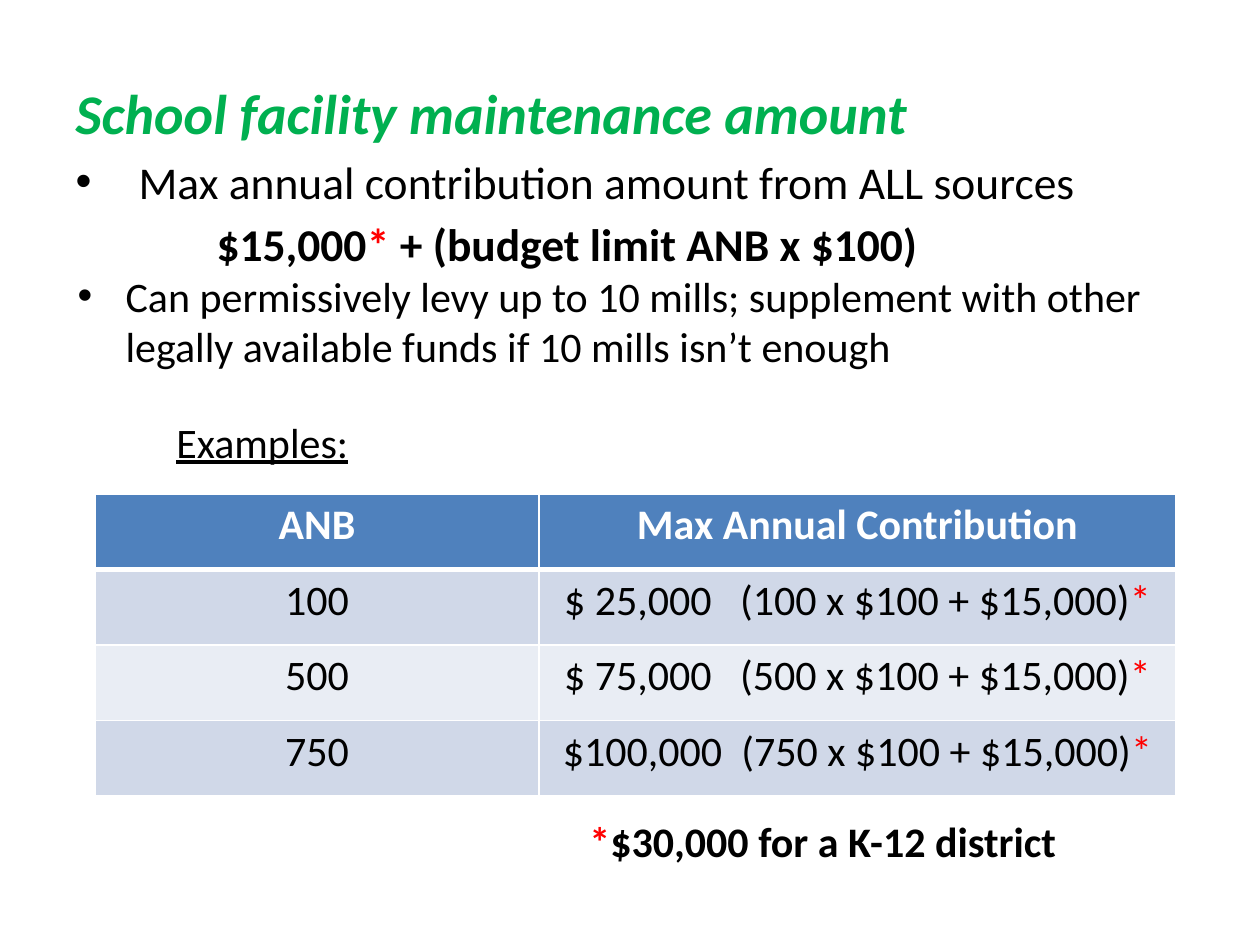
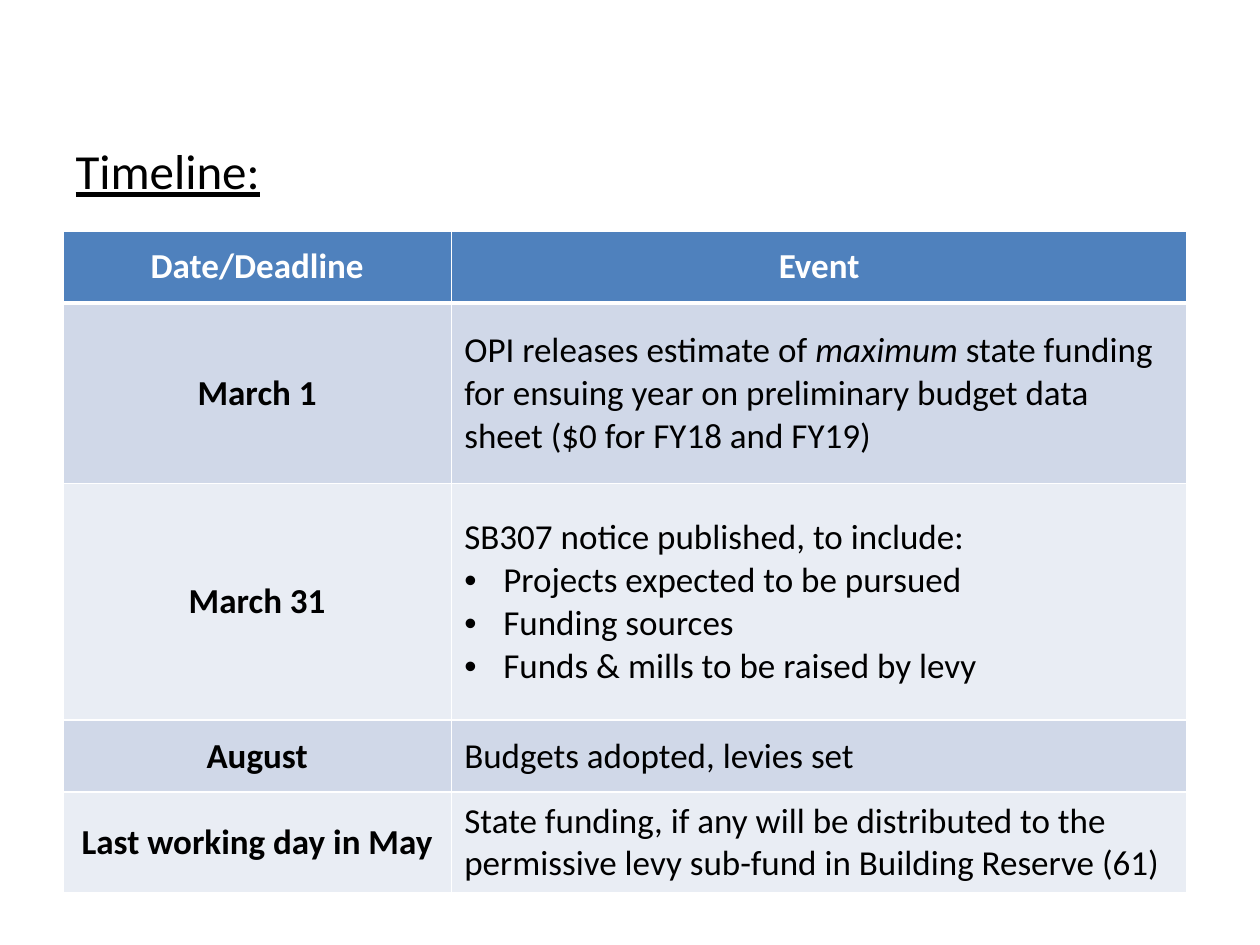
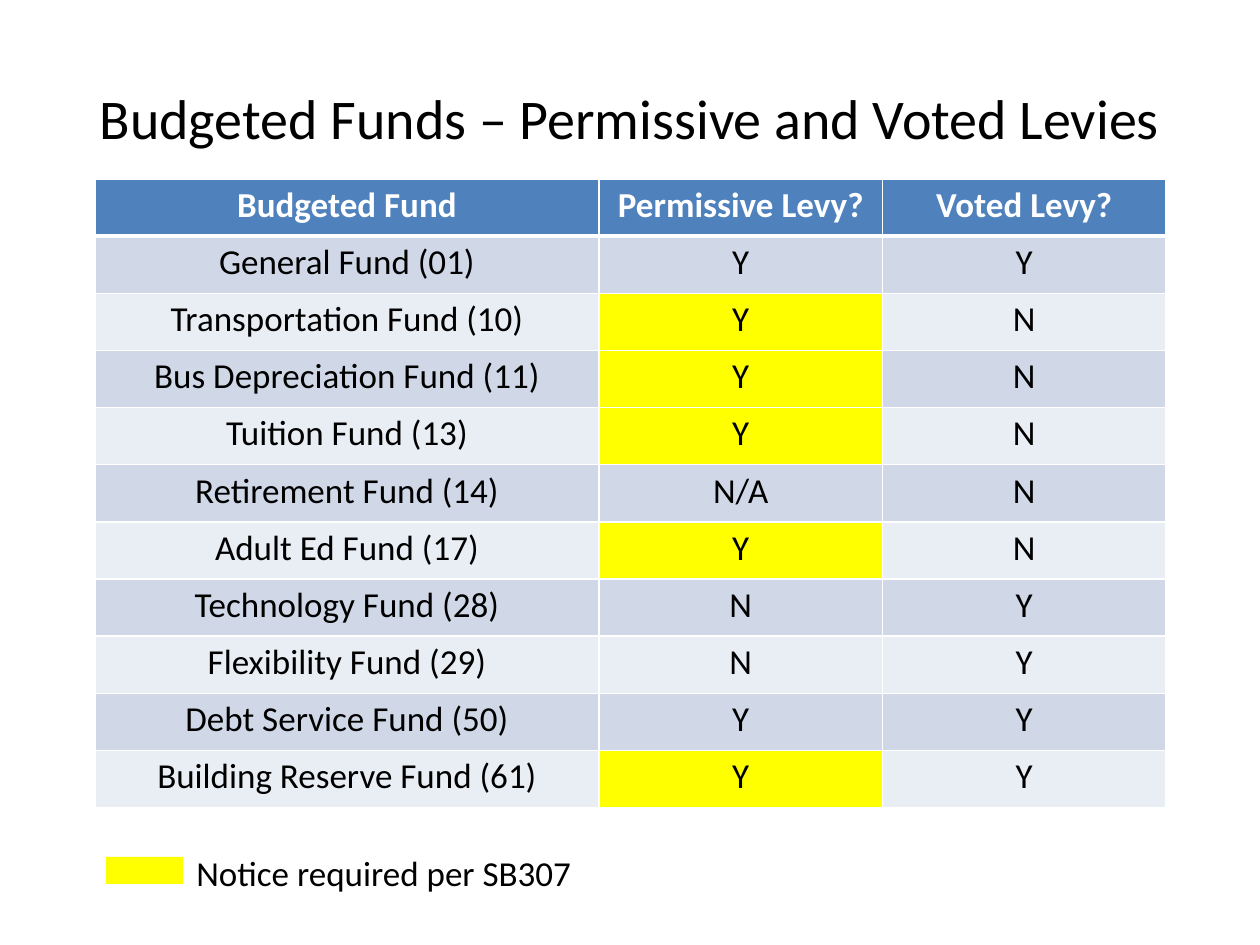
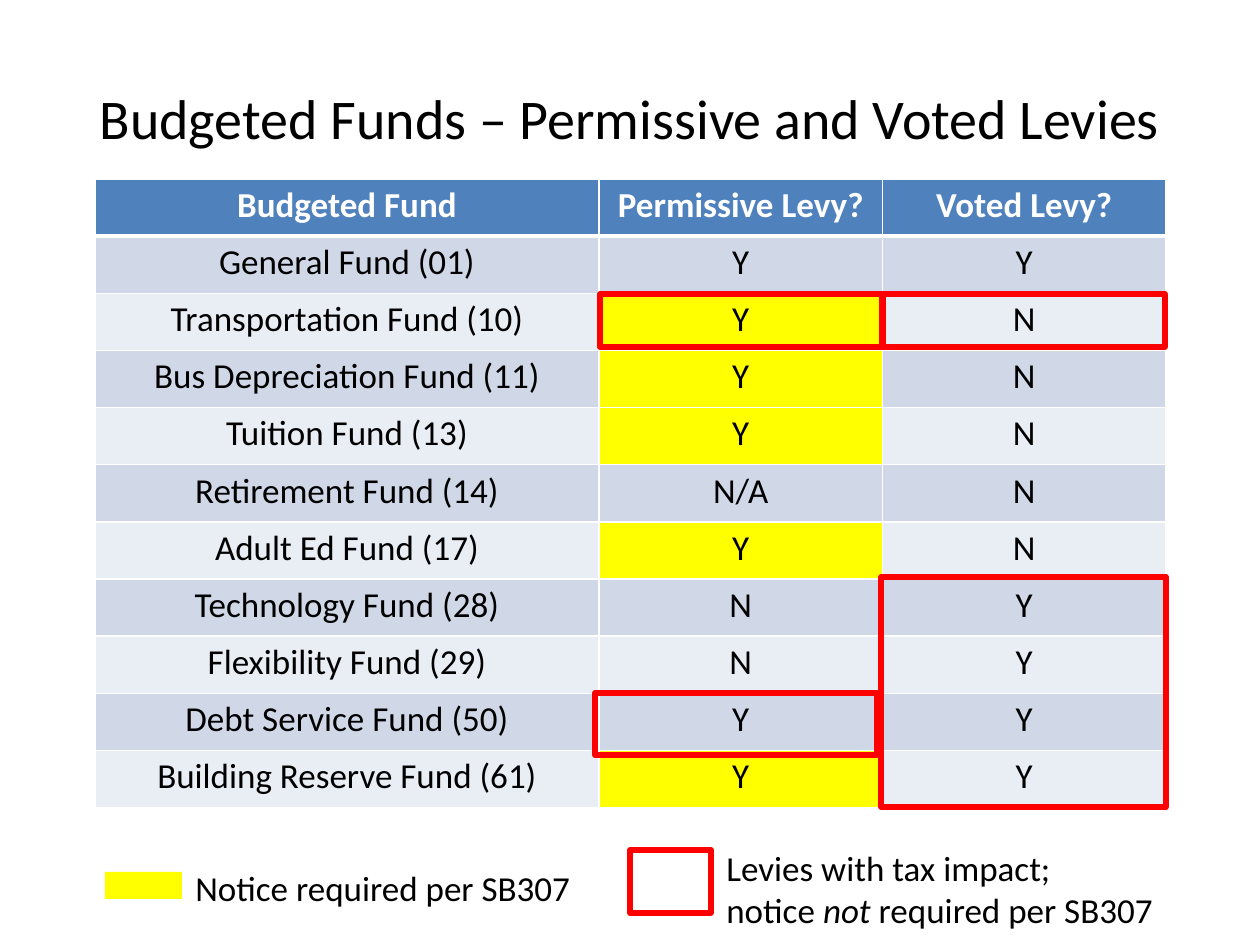
from lxml import etree
from pptx import Presentation
from pptx import util as u
from pptx.dml.color import RGBColor
from pptx.enum import shapes, text
from pptx.oxml import ns

PX = 914400 / 126  # EMU in one px
FONT = "Calibri"
COLORS = {
    "ink": "000000", "white": "FFFFFF", "heading": "00B050", "alert": "FF0000",
    "notice": "FFFF00", "header": "4F81BD", "odd": "D0D8E8", "even": "E9EDF4",
}
TITLE_BOX = (63, 38, 1134, 158)
FUNDS_BOX = (95, 179, 1071, 629)
CENTER = text.PP_ALIGN.CENTER
MIDDLE = text.MSO_ANCHOR.MIDDLE
STAR = ("*", {"color": "alert"})

FUNDS = [
    ("General Fund (01)", "Y", "Y"),
    ("Transportation Fund (10)", "Y", "N"),
    ("Bus Depreciation Fund (11)", "Y", "N"),
    ("Tuition Fund (13)", "Y", "N"),
    ("Retirement Fund (14)", "N/A", "N"),
    ("Adult Ed Fund (17)", "Y", "N"),
    ("Technology Fund (28)", "N", "Y"),
    ("Flexibility Fund (29)", "N", "Y"),
    ("Debt Service Fund (50)", "Y", "Y"),
    ("Building Reserve Fund (61)", "Y", "Y"),
]
NOTICE_ROWS = (2, 3, 4, 6, 10)


# ---- Shared helpers ----
def emu(px):
    return u.Emu(round(px * PX))


def rgb(name):
    return RGBColor.from_string(COLORS[name])


def format_run(run, size=20, color="ink", bold=False, italic=False,
               underline=False, spacing=0):
    font = run.font
    font.name, font.size = FONT, u.Pt(size)
    font.bold, font.italic, font.underline = bold, italic, underline
    font.color.rgb = rgb(color)
    if spacing:
        run._r.get_or_add_rPr().set("spc", str(round(spacing * 100)))


def write(frame, content, align=None, line=1.0, margin=0, indent=0, bullet=False,
          **style):
    """Add a paragraph; content is a string or a list of strings and (string, style)."""
    paragraph = frame.add_paragraph() if frame.text else frame.paragraphs[0]
    paragraph.alignment = align or text.PP_ALIGN.LEFT
    paragraph.line_spacing = line
    paragraph.space_before = u.Pt(0)
    props = paragraph._p.get_or_add_pPr()
    props.set("marL", str(emu(margin)))
    props.set("indent", str(emu(indent)))
    if bullet:
        etree.SubElement(props, ns.qn("a:buFont")).set("typeface", "Arial")
        etree.SubElement(props, ns.qn("a:buChar")).set("char", "•")
    else:
        etree.SubElement(props, ns.qn("a:buNone"))
    for part in [content] if isinstance(content, str) else content:
        words, extra = (part, {}) if isinstance(part, str) else part
        run = paragraph.add_run()
        run.text = words
        format_run(run, **{**style, **extra})


def place(shape, box):
    shape.left, shape.top, shape.width, shape.height = map(emu, box)
    return shape


def body(slide, box):
    """Keep only the body placeholder of the slide and return its text frame."""
    title = slide.shapes.title
    title._element.getparent().remove(title._element)
    frame = place(slide.placeholders[1], box).text_frame
    frame.auto_size = text.MSO_AUTO_SIZE.NONE
    return frame


def text_box(slide, box, wrap=False):
    frame = slide.shapes.add_textbox(*map(emu, box)).text_frame
    frame.word_wrap = wrap
    frame.auto_size = text.MSO_AUTO_SIZE.SHAPE_TO_FIT_TEXT
    return frame


def rectangle(slide, box, fill=None, line=None):
    shape = slide.shapes.add_shape(shapes.MSO_SHAPE.RECTANGLE, *map(emu, box))
    shape.shadow.inherit = False
    if fill:
        shape.fill.solid()
        shape.fill.fore_color.rgb = rgb(fill)
    else:
        shape.fill.background()
    if line:
        shape.line.color.rgb = rgb(line)
        shape.line.width = u.Pt(3)
    else:
        shape.line.fill.background()


def border(cell, side, width):
    line = etree.SubElement(cell._tc.get_or_add_tcPr(), ns.qn(f"a:ln{side}"),
                            w=str(u.Pt(width)))
    fill = etree.SubElement(line, ns.qn("a:solidFill"))
    etree.SubElement(fill, ns.qn("a:srgbClr")).set("val", COLORS["white"])


def banded_table(slide, box, columns, rows, size, heights=None, inset=(13, 6),
                 anchor=text.MSO_ANCHOR.TOP, marked=()):
    """Header row and banded rows; a cell is one paragraph or a list of (content, format)."""
    heights = heights or [1] * len(rows)
    table = slide.shapes.add_table(len(rows), len(columns), *map(emu, box)).table
    for column, width in zip(table.columns, columns):
        column.width = emu(box[2] * width / sum(columns))
    for r, (row, height) in enumerate(zip(rows, heights)):
        table.rows[r].height = emu(box[3] * height / sum(heights))
        band = "header" if r == 0 else "odd" if r % 2 else "even"
        for c, paragraphs in enumerate(row):
            cell = table.cell(r, c)
            cell.margin_left = cell.margin_right = emu(inset[0])
            cell.margin_top = cell.margin_bottom = emu(inset[1])
            cell.vertical_anchor = anchor
            for side in "LRTB":
                border(cell, side, 3 if (r, side) in ((0, "B"), (1, "T")) else 1)
            cell.fill.solid()
            cell.fill.fore_color.rgb = rgb("notice" if (r, c) in marked else band)
            base = {"size": size, "align": CENTER}
            if r == 0:
                base.update(color="white", bold=True)
            if isinstance(paragraphs, str):
                paragraphs = [(paragraphs, {})]
            for content, style in paragraphs:
                write(cell.text_frame, content, **{**base, **style})


# ---- Maintenance amount ----
def contribution(amount, gap, formula):
    return [([amount, (" ", {"spacing": gap}), formula, STAR], {})]


def maintenance_slide(slide):
    points = body(slide, (63, 63, 1134, 840))
    write(points, "School facility maintenance amount", size=32, color="heading",
          bold=True, italic=True, line=1.14)
    write(points, "Max annual contribution amount from ALL sources", size=26,
          line=1.14, margin=63, indent=-63, bullet=True)
    write(points, ["$15,000", STAR, " + (budget limit ANB x $100)"], size=26,
          bold=True, line=1.14, margin=141)
    write(points, "Can permissively levy up to 10 mills; supplement with other "
          "legally available funds if 10 mills isn’t enough", size=24,
          margin=50, indent=-48, bullet=True)

    write(text_box(slide, (164, 410, 199, 63)), "Examples:", size=24, underline=True)
    banded_table(slide, (95, 494, 1081, 302), (444, 637), [
        ("ANB", "Max Annual Contribution"),
        ("100", contribution("$ 25,000", 10.8, "(100 x $100 + $15,000)")),
        ("500", contribution("$ 75,000", 10.8, "(500 x $100 + $15,000)")),
        ("750", contribution("$100,000", 5.4, "(750 x $100 + $15,000)")),
    ], size=24)
    write(text_box(slide, (577, 809, 525, 63), wrap=True),
          [STAR, "$30,000 for a K-12 district"], size=24, bold=True)


# ---- Timeline ----
def timeline_slide(slide):
    write(body(slide, (63, 126, 1144, 788)), "Timeline:", size=28, underline=True,
          line=1.14)
    left = {"align": text.PP_ALIGN.LEFT}
    item = {**left, "margin": 39, "indent": -39, "bullet": True}

    def deadline(date, *event):
        return [(date, {"bold": True})], event

    banded_table(slide, (63, 231, 1124, 662), (388, 735), [
        ("Date/Deadline", "Event"),
        deadline("March 1", ([
            "OPI releases estimate of ", ("maximum ", {"italic": True}),
            "state funding for ensuing year on preliminary budget data sheet "
            "($0 for FY18 and FY19)"], left)),
        deadline("March 31",
                 ("SB307 notice published, to include:", left),
                 ("Projects expected to be pursued", item),
                 ("Funding sources", item),
                 ("Funds & mills to be raised by levy", item)),
        deadline("August", ("Budgets adopted, levies set", left)),
        deadline("Last working day in May", (
            "State funding, if any will be distributed to the permissive levy "
            "sub-fund in Building Reserve (61)", left)),
    ], size=20, heights=(72, 181, 237, 72, 101), anchor=MIDDLE)


# ---- Budgeted funds ----
def funds_slide(slide, key_left, key_top):
    title = place(slide.shapes.title, TITLE_BOX).text_frame
    title.vertical_anchor = MIDDLE
    write(title, "Budgeted Funds – Permissive and Voted Levies", size=32, align=CENTER)
    banded_table(slide, FUNDS_BOX, (400, 225, 225),
                 [("Budgeted Fund", "Permissive Levy?", "Voted Levy?"), *FUNDS],
                 size=20, inset=(9, 5), marked=[(r, 1) for r in NOTICE_ROWS])
    # Key for the marked cells
    rectangle(slide, (key_left, key_top, 77, 27), fill="notice")
    write(text_box(slide, (key_left + 78, key_top - 12, 404, 55)),
          "Notice required per SB307")


def tax_impact(slide):
    outlines = [
        (600, 294, 282, 53),   # transportation, permissive
        (883, 294, 282, 53),   # transportation, voted
        (595, 693, 282, 62),   # debt service, permissive
        (881, 577, 285, 230),  # technology to building reserve, voted
        (630, 850, 81, 63),    # key
    ]
    for outline in outlines:
        rectangle(slide, outline, line="alert")
    key = text_box(slide, (714, 840, 456, 97))
    write(key, "Levies with tax impact;")
    write(key, ["notice ", ("not ", {"italic": True}), "required per SB307"])


def main():
    deck = Presentation()
    deck.slide_width, deck.slide_height = emu(1260), emu(945)
    content, title_only = deck.slide_layouts[1], deck.slide_layouts[5]

    maintenance_slide(deck.slides.add_slide(content))
    timeline_slide(deck.slides.add_slide(content))
    funds_slide(deck.slides.add_slide(title_only), 106, 857)
    impact = deck.slides.add_slide(title_only)
    funds_slide(impact, 105, 872)
    tax_impact(impact)
    deck.save("out.pptx")


if __name__ == "__main__":
    main()
